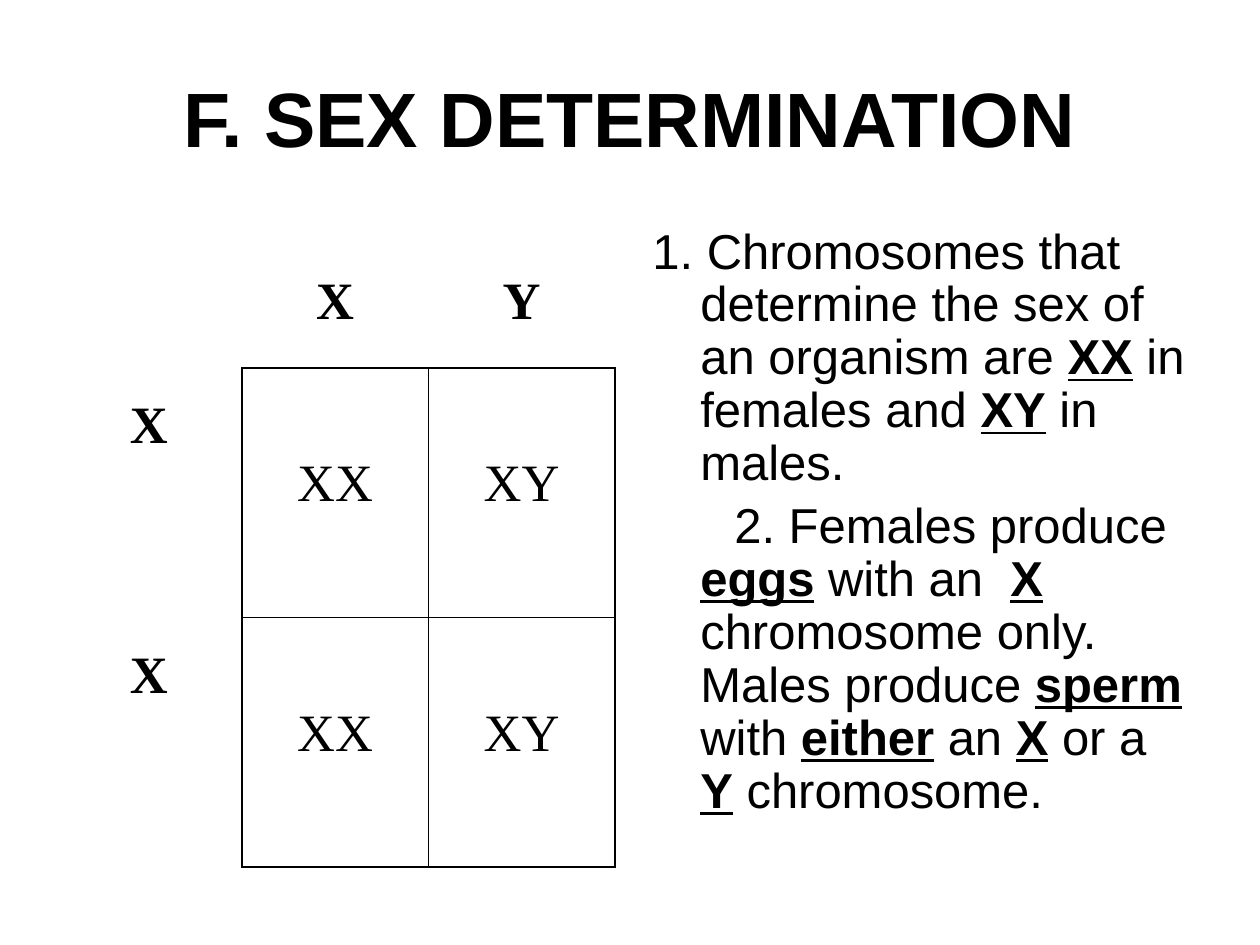
from lxml.etree import SubElement
from pptx import Presentation
from pptx.dml.color import RGBColor
from pptx.enum.text import MSO_ANCHOR, PP_ALIGN
from pptx.oxml import parse_xml
from pptx.oxml.ns import nsdecls, qn
from pptx.util import Inches, Pt

BLACK = RGBColor(0x00, 0x00, 0x00)
SANS, SERIF = "Arial", "Times New Roman"
NO_TABLE_STYLE = "{2D5ABB26-0587-4C30-8999-92F81FD0307C}"

PUNNETT = [["", "X", "Y"],
           ["X", "XX", "XY"],
           ["X", "XX", "XY"]]

# Each paragraph: first-line indent in inches, then (text, is key term) runs.
NOTES = [
    (-0.38, [("1. Chromosomes that determine the sex of an organism are ", False),
             ("XX", True), (" in females and ", False),
             ("XY", True), (" in males.", False)]),
    (0.27, [("2. Females produce ", False), ("eggs", True),
            (" with an  ", False), ("X", True),
            (" chromosome only. Males produce ", False), ("sperm", True),
            (" with ", False), ("either", True), (" an ", False), ("X", True),
            (" or a ", False), ("Y", True), (" chromosome.", False)]),
]


class SlideBuilder:
    def __init__(self, slide):
        self.slide = slide

    def add_run(self, p, text, size, font, bold=False, underline=False):
        r = p.add_run()
        r.text = text
        r.font.size = Pt(size)
        r.font.name = font
        r.font.bold = bold
        r.font.underline = underline
        r.font.color.rgb = BLACK

    def text_frame(self, left, top, width, height):
        box = self.slide.shapes.add_textbox(
            Inches(left), Inches(top), Inches(width), Inches(height))
        tf = box.text_frame
        tf.word_wrap = True
        return tf

    def title(self, text):
        tf = self.text_frame(0.5, 0.3, 9, 1.25)
        tf.vertical_anchor = MSO_ANCHOR.MIDDLE
        p = tf.paragraphs[0]
        p.alignment = PP_ALIGN.CENTER
        self.add_run(p, text, 44, SANS, bold=True)

    def notes(self, paragraphs):
        tf = self.text_frame(5.08, 1.75, 4.42, 4.95)
        for i, (indent, runs) in enumerate(paragraphs):
            p = tf.add_paragraph() if i else tf.paragraphs[0]
            p.line_spacing = 0.9
            p.space_before = Pt(5.6)
            pPr = p._p.get_or_add_pPr()
            pPr.set("marL", str(Inches(0.38)))
            pPr.set("indent", str(Inches(indent)))
            for text, key in runs:
                self.add_run(p, text, 28, SANS, bold=key, underline=key)

    def box_cell(self, cell):
        """Draw a thin black line on all four sides of a cell."""
        tcPr = cell._tc.get_or_add_tcPr()
        for i, side in enumerate(("lnL", "lnR", "lnT", "lnB")):
            ln = parse_xml(f'<a:{side} {nsdecls("a")} w="{Pt(1)}"/>')
            fill = SubElement(ln, qn("a:solidFill"))
            SubElement(fill, qn("a:srgbClr"), val=str(BLACK))
            tcPr.insert(i, ln)

    def punnett_square(self, rows):
        """Draw unboxed headings and boxed offspring cells."""
        frame = self.slide.shapes.add_table(
            3, 3, Inches(0.44), Inches(1.93), Inches(4.44), Inches(4.96))
        table = frame.table
        table.first_row = table.horz_banding = False
        table._tbl.tblPr.find(qn("a:tableStyleId")).text = NO_TABLE_STYLE
        for col in table.columns:
            col.width = Inches(1.48)
        for row, height in zip(table.rows, (0.99, 1.98, 1.98)):
            row.height = Inches(height)
        for i, texts in enumerate(rows):
            for j, text in enumerate(texts):
                cell = table.cell(i, j)
                offspring = i > 0 and j > 0
                cell.fill.background()
                cell.margin_left = cell.margin_right = Inches(0.07)
                cell.margin_top = Inches(0.46 if offspring else 0)
                cell.margin_bottom = 0
                if offspring:
                    self.box_cell(cell)
                if text:
                    p = cell.text_frame.paragraphs[0]
                    p.alignment = PP_ALIGN.CENTER
                    p.line_spacing = 1.5
                    self.add_run(p, text, 30, SERIF, bold=not offspring)


def main():
    prs = Presentation()
    prs.slide_width, prs.slide_height = Inches(10), Inches(7.5)
    s = SlideBuilder(prs.slides.add_slide(prs.slide_layouts[6]))
    s.title("F. SEX DETERMINATION")
    s.notes(NOTES)
    s.punnett_square(PUNNETT)
    prs.save("out.pptx")


if __name__ == "__main__":
    main()
